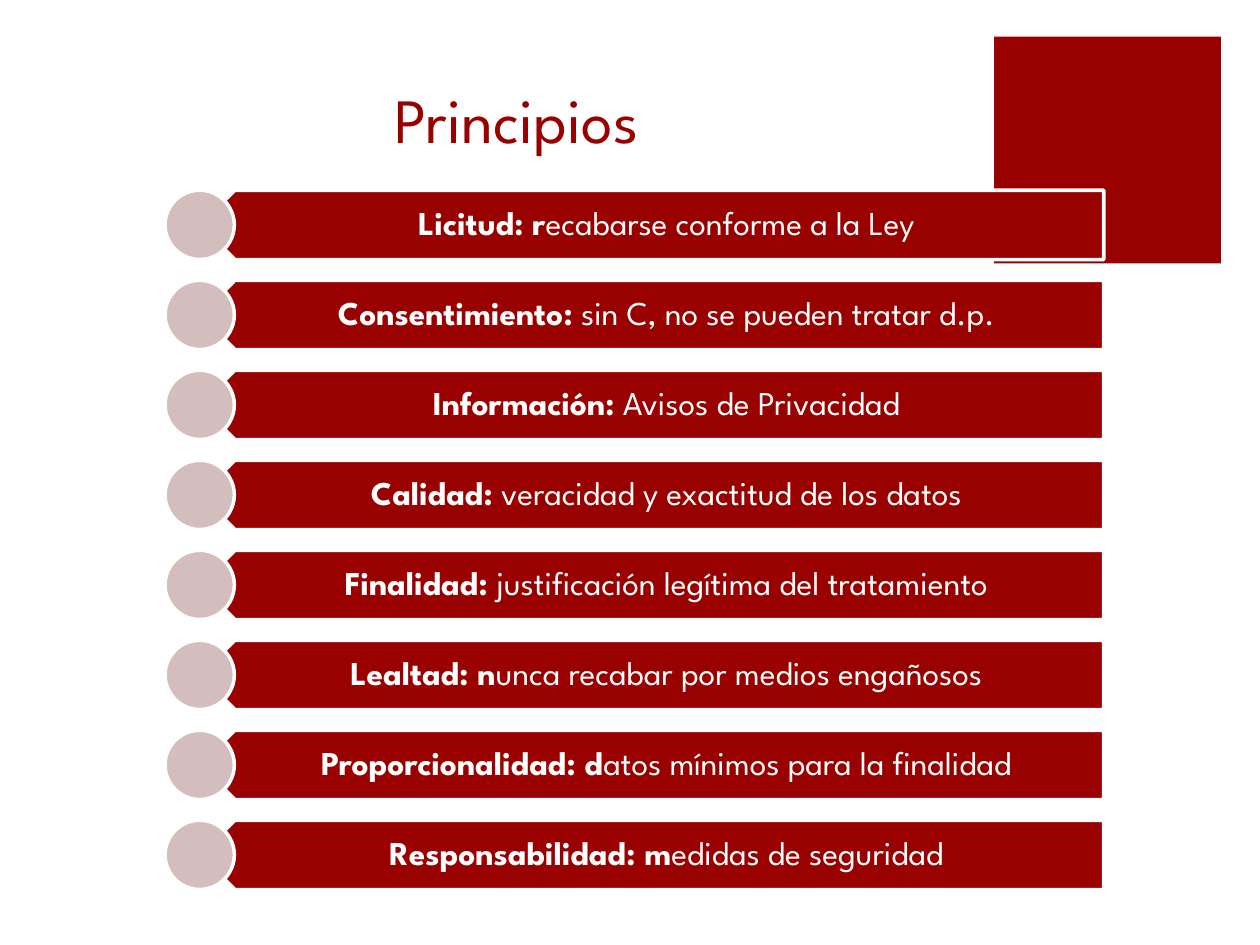
from pptx import Presentation
from pptx import util as u
from pptx.dml import color
from pptx.enum import shapes, text

FONT = "League Spartan"
RED, ROSE, WHITE = "990000", "D4BDBD", "FFFFFF"
FIRST_TOP, LAST_TOP, BAR_HEIGHT = 1.51, 6.51, 0.55

PRINCIPLES = [
    ("Licitud: r", "ecabarse conforme a la Ley"),
    ("Consentimiento:", " sin C, no se pueden tratar d.p."),
    ("Información:", " Avisos de Privacidad"),
    ("Calidad:", " veracidad y exactitud de los datos"),
    ("Finalidad:", " justificación legítima del tratamiento"),
    ("Lealtad: n", "unca recabar por medios engañosos"),
    ("Proporcionalidad: d", "atos mínimos para la finalidad"),
    ("Responsabilidad: m", "edidas de seguridad"),
]


def rgb(value):
    return color.RGBColor.from_string(value)


def box(left, top, width, height):
    return [u.Inches(n) for n in (left, top, width, height)]


def style_paragraph(paragraph, size, colour):
    paragraph.alignment = text.PP_ALIGN.CENTER
    paragraph.font.name = FONT
    paragraph.font.size = u.Pt(size)
    paragraph.font.color.rgb = rgb(colour)


def add_title(slide, wording):
    title = slide.shapes.title
    title.left, title.top, title.width, title.height = box(0.54, 0.04, 7.12, 1.25)
    title.text_frame.text = wording
    title.text_frame.vertical_anchor = text.MSO_ANCHOR.BOTTOM
    style_paragraph(title.text_frame.paragraphs[0], 36, RED)


def add_filled(parent, preset, place, fill, outlined=True):
    shape = parent.add_shape(preset, *box(*place))
    shape.shadow.inherit = False
    shape.fill.solid()
    shape.fill.fore_color.rgb = rgb(fill)
    if outlined:
        shape.line.color.rgb = rgb(WHITE)
        shape.line.width = u.Pt(2)
    else:
        shape.line.fill.background()
    return shape


def add_label(parent, place, heading, detail):
    frame = parent.add_textbox(*box(*place)).text_frame
    frame.word_wrap = True
    frame.vertical_anchor = text.MSO_ANCHOR.MIDDLE
    frame.margin_left, frame.margin_right = u.Inches(0.24), u.Inches(0.15)
    frame.margin_top = frame.margin_bottom = u.Inches(0.08)
    paragraph = frame.paragraphs[0]
    paragraph.line_spacing = 0.9
    style_paragraph(paragraph, 19, WHITE)
    for wording, bold in ((heading, True), (detail, False)):
        run = paragraph.add_run()
        run.text = wording
        run.font.bold = bold


def add_principle(parent, top, heading, detail):
    preset = shapes.MSO_SHAPE
    bar = add_filled(parent, preset.PENTAGON, (1.59, top, 7.17, BAR_HEIGHT), RED)
    bar.rotation = 180
    add_label(parent, (1.73, top, 7.03, BAR_HEIGHT), heading, detail)
    add_filled(parent, preset.OVAL, (1.31, top, BAR_HEIGHT, BAR_HEIGHT), ROSE)


def main():
    deck = Presentation()
    deck.slide_width, deck.slide_height = u.Inches(10), u.Inches(7.5)
    slide = deck.slides.add_slide(deck.slide_layouts[5])
    add_filled(slide.shapes, shapes.MSO_SHAPE.RECTANGLE, (7.89, 0.29, 1.8, 1.8), RED, outlined=False)
    add_title(slide, "Principios")
    principles = slide.shapes.add_group_shape().shapes
    step = (LAST_TOP - FIRST_TOP) / (len(PRINCIPLES) - 1)
    for row, (heading, detail) in enumerate(PRINCIPLES):
        add_principle(principles, FIRST_TOP + row * step, heading, detail)
    deck.save("out.pptx")


if __name__ == "__main__":
    main()
